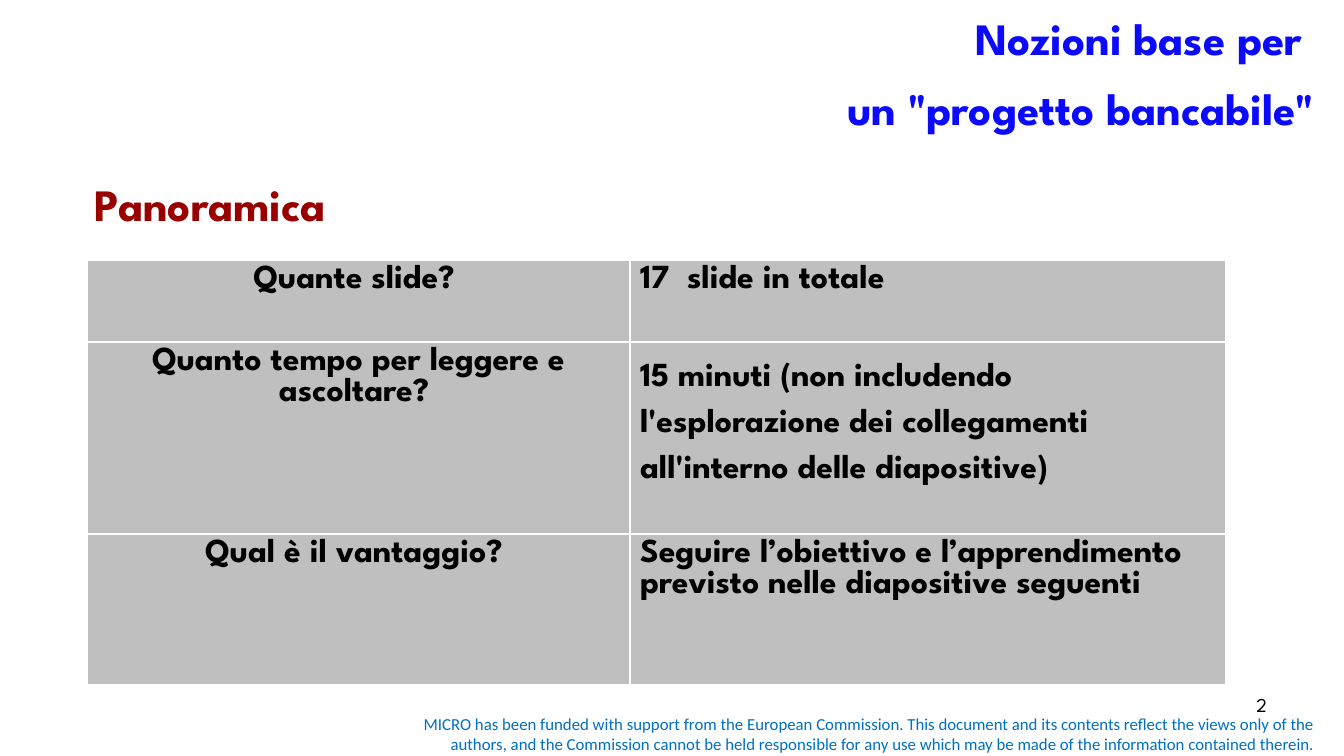
from lxml import etree
from pptx import Presentation
from pptx.dml.color import RGBColor
from pptx.enum.text import MSO_ANCHOR, MSO_AUTO_SIZE, PP_ALIGN
from pptx.oxml.ns import qn
from pptx.util import Emu, Pt

PX = 914400 / 100.8
SPARTAN = "League Spartan"
WHITE, GREY = "FFFFFF", "BFBFBF"


def px(*lengths):
    """Turn pixel lengths into EMU."""
    return [Emu(round(n * PX)) for n in lengths]


def write(tf, text, size, color, font=SPARTAN, bold=False, align=PP_ALIGN.LEFT,
          anchor=MSO_ANCHOR.TOP, spacing=None):
    tf.word_wrap = True
    tf.vertical_anchor = anchor
    p = tf.paragraphs[0]
    p.alignment = align
    p.line_spacing = spacing
    for i, line in enumerate(text.split("\n")):
        if i:
            p.add_line_break()
        r = p.add_run()
        r.text = line
        r.font.name, r.font.size, r.font.bold = font, Pt(size), bold
        r.font.color.rgb = RGBColor.from_string(color)


prs = Presentation()
prs.slide_width, prs.slide_height = px(1344, 756)
slide = prs.slides.add_slide(prs.slide_layouts[5])

# Title
title = slide.shapes.title
title.left, title.top, title.width, title.height = px(115, 2, 1210, 126)
title.text_frame.auto_size = MSO_AUTO_SIZE.NONE
write(title.text_frame, 'Nozioni base per \nun "progetto bancabile"', 32, "0B0AFD",
      bold=True, align=PP_ALIGN.RIGHT, anchor=MSO_ANCHOR.MIDDLE, spacing=1.29)

# Heading, slide number and funding note
heading = slide.shapes.add_textbox(*px(85, 172, 292, 65))
write(heading.text_frame, "Panoramica", 32, "990000", bold=True)

number = slide.shapes.add_textbox(*px(964, 688, 313, 52))
write(number.text_frame, "2", 14, "000000", align=PP_ALIGN.RIGHT)

note = slide.shapes.add_textbox(*px(378, 709, 947, 50))
write(note.text_frame,
      "MICRO has been funded with support from the European Commission. "
      "This document and its contents reflect the views only of the authors, "
      "and the Commission cannot be held responsible for any use which may be "
      "made of the information contained therein.",
      12, "0070C0", font="Calibri", align=PP_ALIGN.RIGHT, anchor=MSO_ANCHOR.MIDDLE)

# Overview table: question, answer, row height, line spacing of the answer
rows = [
    ("Quante slide? ", "17  slide in totale", 82, None),
    ("Quanto tempo per leggere e ascoltare? ",
     "15 minuti (non includendo l'esplorazione dei collegamenti "
     "all'interno delle diapositive)", 192, 1.5),
    ("Qual è il vantaggio? ",
     "Seguire l’obiettivo e l’apprendimento previsto nelle diapositive seguenti",
     151, None),
]
table = slide.shapes.add_table(3, 2, *px(87, 260, 1139, 425)).table
table.columns[0].width, table.columns[1].width = px(543, 596)

for row, (question, answer, height, spacing) in zip(table.rows, rows):
    row.height = px(height)[0]
    write(row.cells[0].text_frame, question, 24, "000000", bold=True,
          align=PP_ALIGN.CENTER)
    write(row.cells[1].text_frame, answer, 24, "000000", bold=True, spacing=spacing)
    for cell in row.cells:
        tcPr = cell._tc.get_or_add_tcPr()
        for side in ("a:lnL", "a:lnR", "a:lnT", "a:lnB"):
            ln = etree.SubElement(tcPr, qn(side), w=str(Pt(1)))
            fill = etree.SubElement(ln, qn("a:solidFill"))
            etree.SubElement(fill, qn("a:srgbClr"), val=WHITE)
        cell.fill.solid()
        cell.fill.fore_color.rgb = RGBColor.from_string(GREY)

prs.save("out.pptx")
